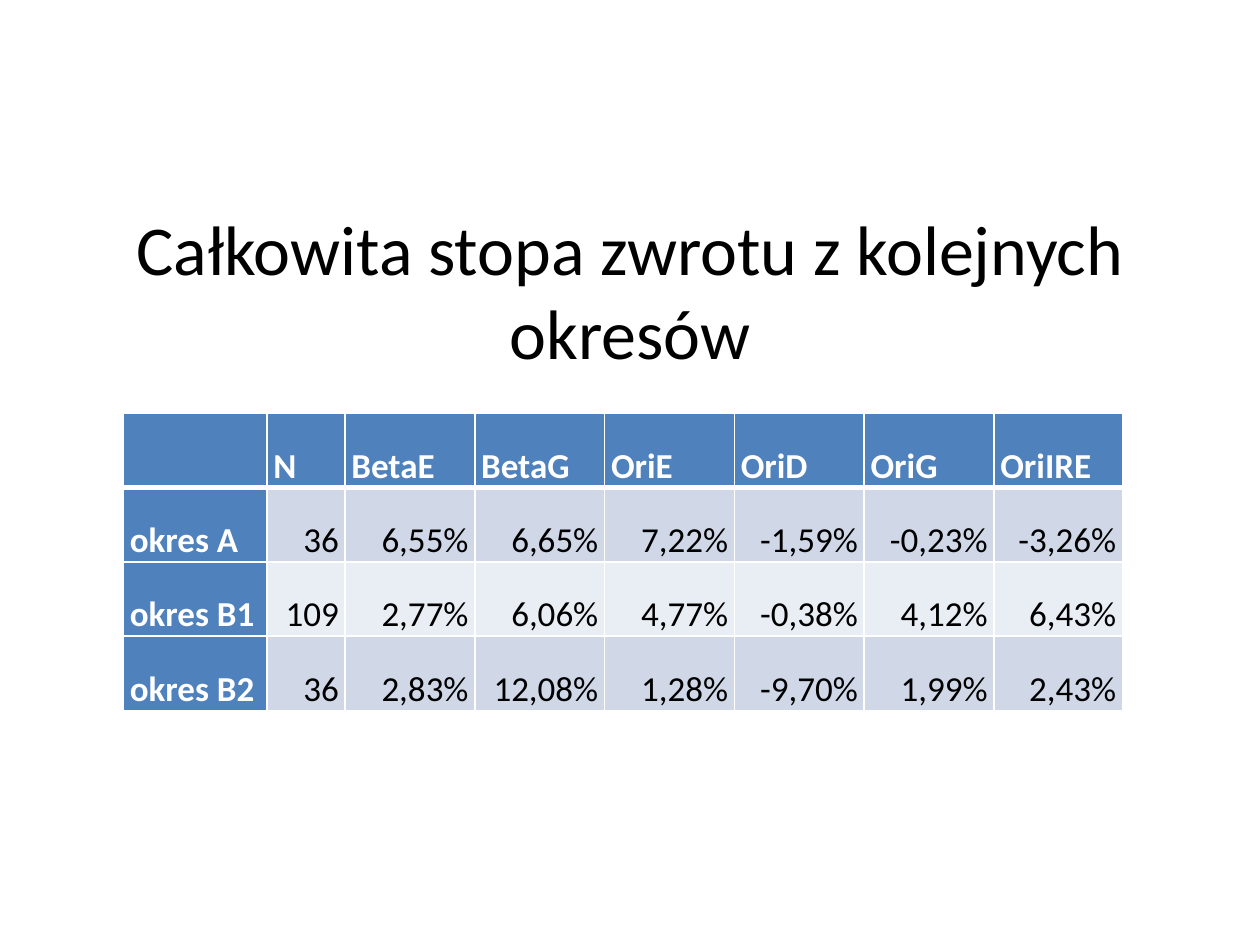
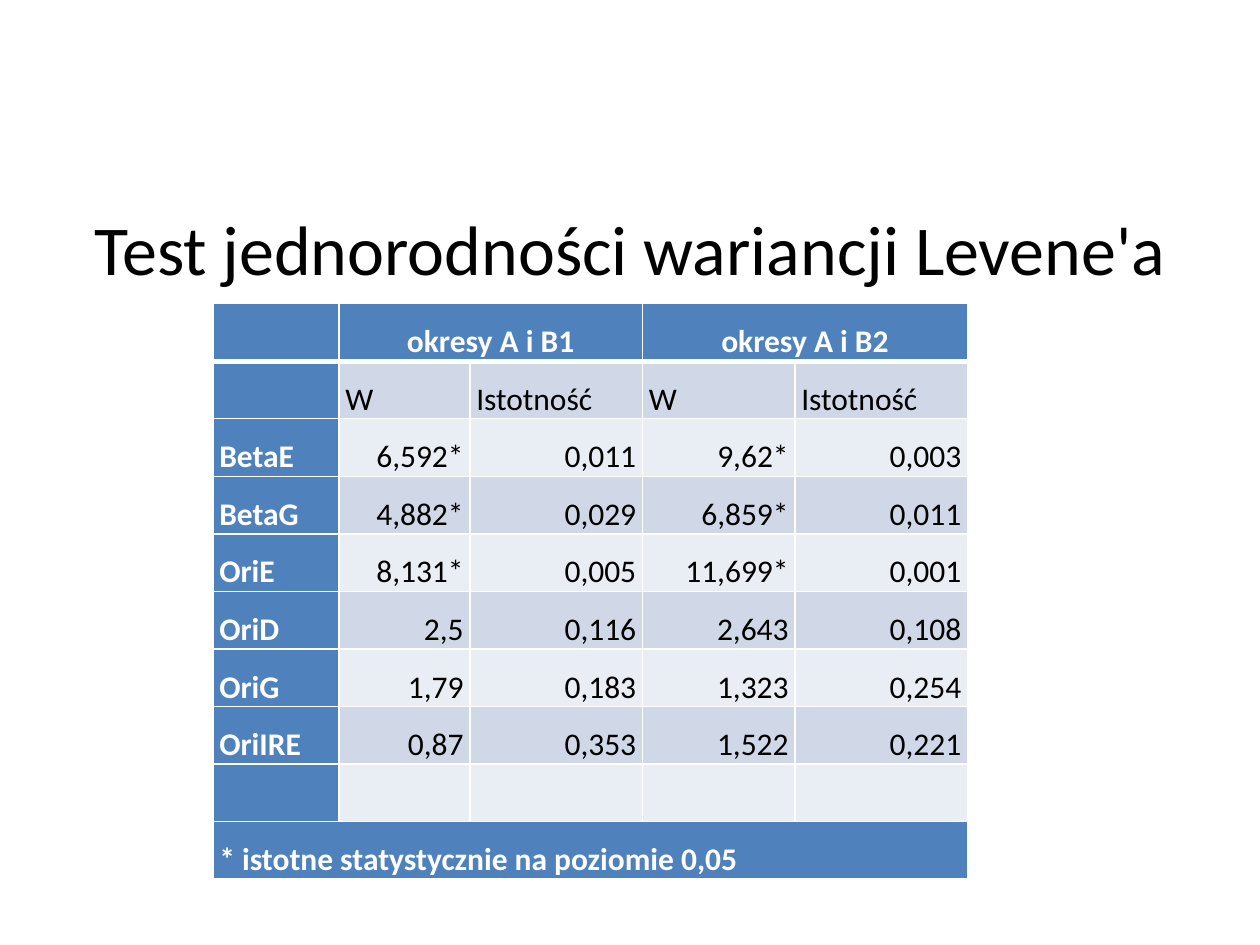
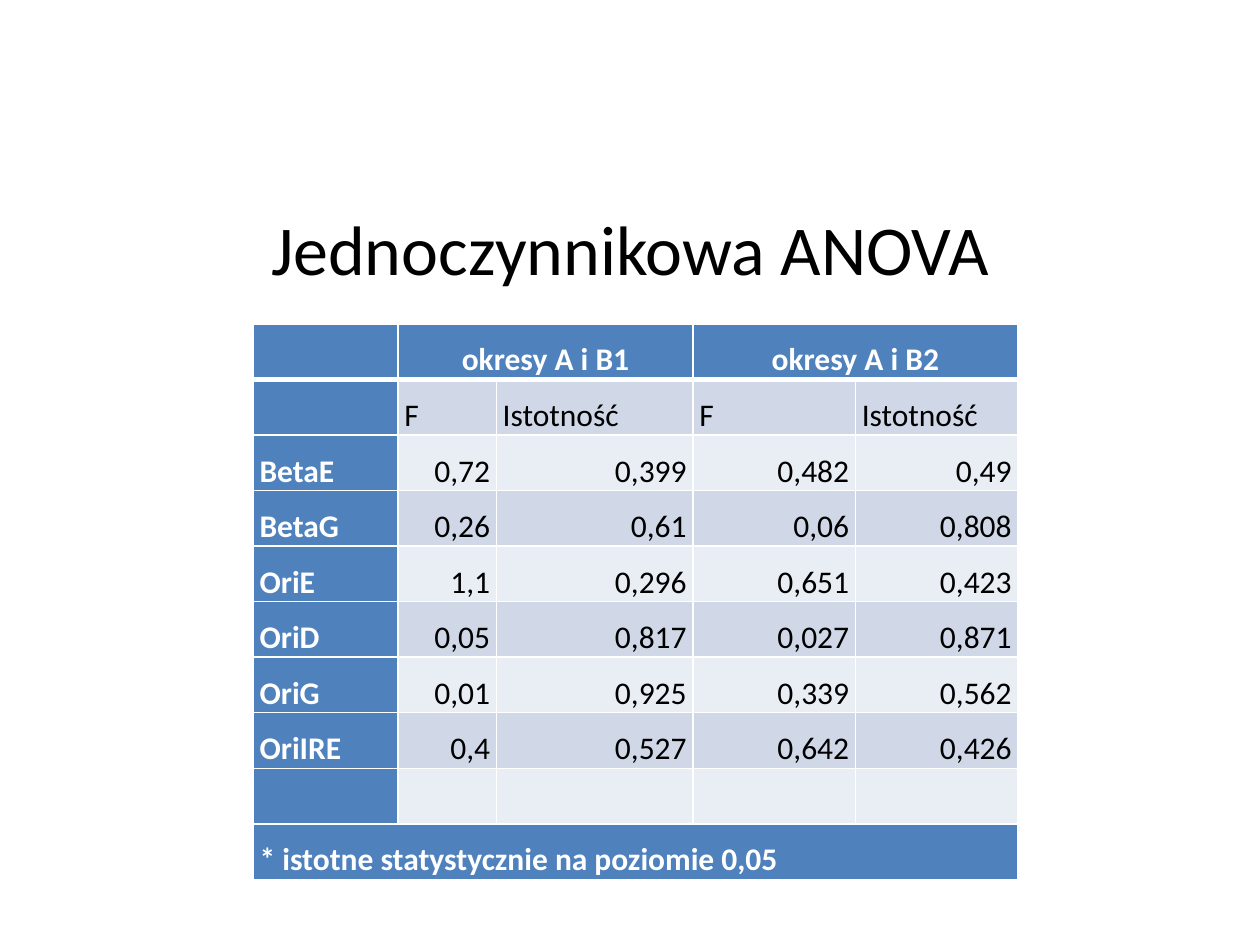
from lxml.etree import SubElement
from pptx import Presentation
from pptx.dml.color import RGBColor
from pptx.enum.text import MSO_ANCHOR, PP_ALIGN
from pptx.oxml.ns import qn
from pptx.util import Inches, Pt

FONT = "Calibri"
BLUE, BAND_DARK, BAND_LIGHT = "4F81BD", "D0D8E8", "E9EDF4"
WHITE, BLACK = "FFFFFF", "000000"
TITLE_BOX = (0.5, 1.58, 9, 0.98)

FUNDS = ["BetaE", "BetaG", "OriE", "OriD", "OriG", "OriIRE"]
RETURNS = [
    ["", "N", *FUNDS],
    ["okres A", "36", "6,55%", "6,65%", "7,22%", "-1,59%", "-0,23%", "-3,26%"],
    ["okres B1", "109", "2,77%", "6,06%", "4,77%", "-0,38%", "4,12%", "6,43%"],
    ["okres B2", "36", "2,83%", "12,08%", "1,28%", "-9,70%", "1,99%", "2,43%"],
]
LEVENE = [
    ["6,592*", "0,011", "9,62*", "0,003"],
    ["4,882*", "0,029", "6,859*", "0,011"],
    ["8,131*", "0,005", "11,699*", "0,001"],
    ["2,5", "0,116", "2,643", "0,108"],
    ["1,79", "0,183", "1,323", "0,254"],
    ["0,87", "0,353", "1,522", "0,221"],
]
ANOVA = [
    ["0,72", "0,399", "0,482", "0,49"],
    ["0,26", "0,61", "0,06", "0,808"],
    ["1,1", "0,296", "0,651", "0,423"],
    ["0,05", "0,817", "0,027", "0,871"],
    ["0,01", "0,925", "0,339", "0,562"],
    ["0,4", "0,527", "0,642", "0,426"],
]


def test_rows(statistic, results):
    return [
        ["", "okresy A i B1", None, "okresy A i B2", None],
        ["", *[statistic, "Istotność"] * 2],
        *[[fund, *values] for fund, values in zip(FUNDS, results)],
        [""] * 5,
        ["* istotne statystycznie na poziomie 0,05"] + [None] * 4,
    ]


SLIDES = [
    dict(title="Całkowita stopa zwrotu z kolejnych okresów", rows=RETURNS,
         at=(0.98, 3.28), height=2.36, size=20,
         widths=[1.14, 0.62] + [1.03] * 5 + [1.02]),
    dict(title="Test jednorodności wariancji Levene'a", rows=test_rows("W", LEVENE),
         at=(1.69, 2.41), height=4.57, size=18,
         widths=[1, 1.04, 1.37, 1.21, 1.37]),
    dict(title="Jednoczynnikowa ANOVA", rows=test_rows("F", ANOVA),
         at=(2.01, 2.57), height=4.41, size=18,
         widths=[1.15, 0.78, 1.56, 1.29, 1.29]),
]


def rgb(color):
    return RGBColor.from_string(color)


def write(p, text, size, color, align, bold=False):
    p.alignment = align
    r = p.add_run()
    r.text = text
    r.font.name, r.font.size, r.font.bold = FONT, Pt(size), bold
    r.font.color.rgb = rgb(color)


def set_borders(cell, top, bottom):
    tc_pr = cell._tc.get_or_add_tcPr()
    sides = {"L": 1, "R": 1, "T": top, "B": bottom}
    for i, (side, width) in enumerate(sides.items()):
        ln = SubElement(tc_pr, qn(f"a:ln{side}"), w=str(Pt(width)))
        fill = SubElement(ln, qn("a:solidFill"))
        SubElement(fill, qn("a:srgbClr"), val=WHITE)
        tc_pr.insert(i, ln)


def add_title(s, text):
    tf = s.shapes.add_textbox(*map(Inches, TITLE_BOX)).text_frame
    tf.word_wrap = True
    write(tf.paragraphs[0], text, 40, BLACK, PP_ALIGN.CENTER)


def add_cell_text(cell, text, size, heading, align):
    cell.vertical_anchor = MSO_ANCHOR.BOTTOM
    cell.margin_left = cell.margin_right = Inches(0.05)
    cell.margin_top = cell.margin_bottom = 0
    p = cell.text_frame.paragraphs[0]
    p.line_spacing = 1.15
    write(p, text, size, WHITE if heading else BLACK, align, heading)


def add_grid(s, rows, at, height, size, widths):
    box = map(Inches, (*at, sum(widths), height))
    table = s.shapes.add_table(len(rows), len(widths), *box).table
    table.first_row = table.horz_banding = False
    for column, width in zip(table.columns, widths):
        column.width = Inches(width)
    for i, row in enumerate(rows):
        band = BAND_DARK if i % 2 else BAND_LIGHT
        for j, text in enumerate(row):
            cell = table.cell(i, j)
            heading = i == 0 or j == 0 or row[-1] is None
            cell.fill.solid()
            cell.fill.fore_color.rgb = rgb(BLUE if heading else band)
            set_borders(cell, 3 if i == 1 else 1, 3 if i == 0 else 1)
            if not text:
                continue
            end = j
            while end + 1 < len(row) and row[end + 1] is None:
                end += 1
            if end > j:
                cell.merge(table.cell(i, end))
            if i == 0 and end > j:
                align = PP_ALIGN.CENTER
            elif heading or text.isalpha():
                align = PP_ALIGN.LEFT
            else:
                align = PP_ALIGN.RIGHT
            add_cell_text(cell, text, size, heading, align)


def main():
    prs = Presentation()
    prs.slide_width, prs.slide_height = Inches(10), Inches(7.5)
    for content in SLIDES:
        s = prs.slides.add_slide(prs.slide_layouts[6])
        add_title(s, content["title"])
        add_grid(s, *[content[key] for key in ("rows", "at", "height", "size", "widths")])
    prs.save("out.pptx")


if __name__ == "__main__":
    main()
